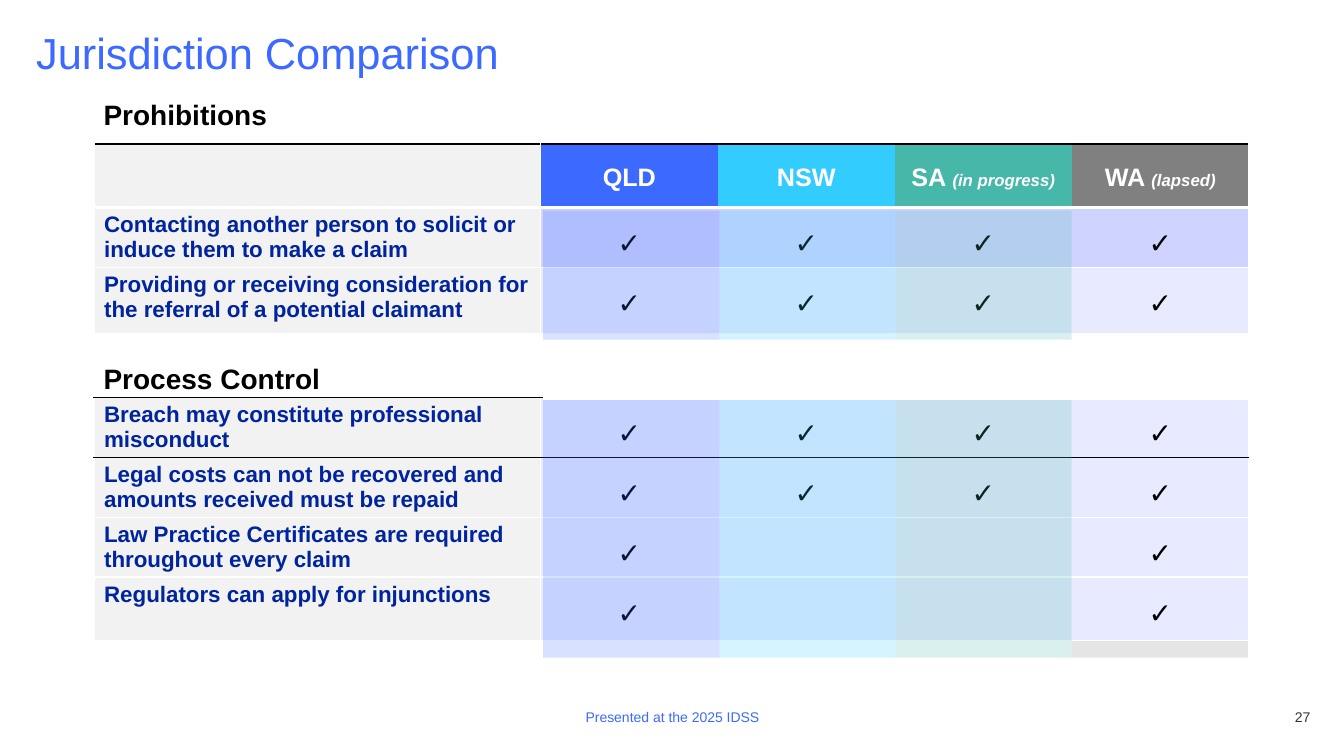
import pptx
import pptx.util
import pptx.dml.color
import pptx.enum.shapes
import pptx.enum.text
import pptx.oxml.ns
import lxml.etree
from dataclasses import dataclass

TITLE = "Jurisdiction Comparison"
SECTIONS = [("Prohibitions", 2.34), ("Process Control", 8.99)]
FOOTER = "Presented at the 2025 IDSS"
PAGE_NUMBER = "27"
JURISDICTIONS = [
    ("QLD", "", "3C69FF"),
    ("NSW", "", "33CCFF"),
    ("SA ", "(in progress)", "47B7AA"),
    ("WA ", "(lapsed)", "808080"),
]
RULES = [
    ("Contacting another person to solicit or induce them to make a claim", "✓✓✓✓", 1.51),
    ("Providing or receiving consideration for the referral of a potential claimant", "✓✓✓✓", 1.66),
    ("", "    ", 1.61),
    ("Breach may constitute professional misconduct", "✓✓✓✓", 1.51),
    ("Legal costs can not be recovered and amounts received must be repaid", "✓✓✓✓", 1.51),
    ("Law Practice Certificates are required throughout every claim", "✓  ✓", 1.51),
    ("Regulators can apply for injunctions", "✓  ✓", 1.6),
]
GAP_ROW = 3
BLACK_LINES = (0, 4, 5)


@dataclass(frozen=True)
class Theme:
    font: str = "Arial"
    blue: str = "3C69FF"
    navy: str = "00249E"
    black: str = "000000"
    white: str = "FFFFFF"
    dark: str = "323232"
    label_fill: str = "F2F2F2"
    first_fill: str = "CED4FF"
    row_fill: str = "E8EBFF"
    title_size: float = 31
    section_size: float = 20
    check_size: float = 20
    header_size: float = 18
    label_size: float = 16
    note_size: float = 12
    small_size: float = 10


theme = Theme()
Cm = pptx.util.Cm
ALIGN = pptx.enum.text.PP_ALIGN
ANCHOR = pptx.enum.text.MSO_ANCHOR

LABEL_WIDTH, COLUMN_WIDTH = 11.26, 4.46
TABLE_LEFT, TABLE_TOP, HEADER_HEIGHT = 2.37, 3.63, 1.6
TINT_LEFT, TINT_TOP, TINT_WIDTH, TINT_HEIGHT = 13.69, 5.31, 4.44, 11.26


def rgb(color):
    return pptx.dml.color.RGBColor.from_string(color)


def add_run(paragraph, text, size, color, bold=False, italic=False):
    run = paragraph.add_run()
    run.text = text
    run.font.name = theme.font
    run.font.size = pptx.util.Pt(size)
    run.font.color.rgb = rgb(color)
    run.font.bold = bold
    run.font.italic = italic


def add_text(slide, box, text, size, color, align=ALIGN.LEFT, bold=False, inset=True):
    frame = slide.shapes.add_textbox(*map(Cm, box)).text_frame
    frame.word_wrap = True
    if not inset:
        frame.margin_left = frame.margin_right = frame.margin_top = frame.margin_bottom = 0
        frame.vertical_anchor = ANCHOR.BOTTOM
    paragraph = frame.paragraphs[0]
    paragraph.alignment = align
    add_run(paragraph, text, size, color, bold)


def add_rectangle(slide, box, color, opacity=100):
    shape = slide.shapes.add_shape(pptx.enum.shapes.MSO_SHAPE.RECTANGLE, *map(Cm, box))
    shape.shadow.inherit = False
    shape.line.fill.background()
    shape.fill.solid()
    shape.fill.fore_color.rgb = rgb(color)
    if opacity < 100:
        value = shape.fill._xPr.find(".//" + pptx.oxml.ns.qn("a:srgbClr"))
        alpha = lxml.etree.SubElement(value, pptx.oxml.ns.qn("a:alpha"))
        alpha.set("val", str(opacity * 1000))


def add_tint(slide, index):
    left = TINT_LEFT + index * TINT_WIDTH
    add_rectangle(slide, (left, TINT_TOP, TINT_WIDTH, TINT_HEIGHT), JURISDICTIONS[index][2], 20)


def set_border(cell, side, color, width):
    properties = cell._tc.get_or_add_tcPr()
    line = lxml.etree.SubElement(properties, pptx.oxml.ns.qn("a:ln" + side))
    line.set("w", str(pptx.util.Pt(width)))
    if color is None:
        lxml.etree.SubElement(line, pptx.oxml.ns.qn("a:noFill"))
        return
    fill = lxml.etree.SubElement(line, pptx.oxml.ns.qn("a:solidFill"))
    lxml.etree.SubElement(fill, pptx.oxml.ns.qn("a:srgbClr")).set("val", color)


def horizontal_line(index):
    if index in BLACK_LINES:
        return theme.black, 1.5 if index == 0 else 1
    return theme.white, 3 if index == 1 else 1


def style_cell(cell, row, column, fill):
    last = len(JURISDICTIONS)
    set_border(cell, "L", theme.white if column <= 1 else None, 1)
    set_border(cell, "R", theme.white if column in (0, last) else None, 1)
    set_border(cell, "T", *horizontal_line(row))
    set_border(cell, "B", *horizontal_line(row + 1))
    cell.fill.solid()
    cell.fill.fore_color.rgb = rgb(fill)
    cell.vertical_anchor = ANCHOR.TOP


def centred_paragraph(cell):
    paragraph = cell.text_frame.paragraphs[0]
    paragraph.alignment = ALIGN.CENTER
    paragraph.line_spacing = 1.5
    return paragraph


def add_comparison(slide):
    heights = [HEADER_HEIGHT] + [height for _, _, height in RULES]
    widths = [LABEL_WIDTH] + [COLUMN_WIDTH] * len(JURISDICTIONS)
    box = (TABLE_LEFT, TABLE_TOP, sum(widths), sum(heights))
    table = slide.shapes.add_table(len(heights), len(widths), *map(Cm, box)).table
    table.horz_banding = False
    table.first_row = False
    for column, width in zip(table.columns, widths):
        column.width = Cm(width)
    for row, height in zip(table.rows, heights):
        row.height = Cm(height)

    style_cell(table.cell(0, 0), 0, 0, theme.label_fill)
    for column, (name, note, color) in enumerate(JURISDICTIONS, 1):
        cell = table.cell(0, column)
        style_cell(cell, 0, column, color)
        paragraph = centred_paragraph(cell)
        add_run(paragraph, name, theme.header_size, theme.white, True)
        if note:
            add_run(paragraph, note, theme.note_size, theme.white, True, True)

    for row, (label, checks, _) in enumerate(RULES, 1):
        gap = row == GAP_ROW
        cell = table.cell(row, 0)
        style_cell(cell, row, 0, theme.white if gap else theme.label_fill)
        if label:
            add_run(cell.text_frame.paragraphs[0], label, theme.label_size, theme.navy, True)
        fill = theme.white if gap else theme.first_fill if row == 1 else theme.row_fill
        for column, check in enumerate(checks, 1):
            cell = table.cell(row, column)
            style_cell(cell, row, column, fill)
            if check.strip():
                add_run(centred_paragraph(cell), check, theme.check_size, theme.black, True)


def main():
    presentation = pptx.Presentation()
    presentation.slide_width, presentation.slide_height = Cm(33.87), Cm(19.05)
    slide = presentation.slides.add_slide(presentation.slide_layouts[5])

    title = slide.shapes.title
    title.left, title.top, title.width, title.height = map(Cm, (0.91, 0.81, 32.11, 2.82))
    frame = title.text_frame
    frame.margin_left = frame.margin_right = frame.margin_top = frame.margin_bottom = 0
    frame.vertical_anchor = ANCHOR.TOP
    frame.auto_size = pptx.enum.text.MSO_AUTO_SIZE.NONE
    paragraph = frame.paragraphs[0]
    paragraph.alignment = ALIGN.LEFT
    paragraph.line_spacing = 0.9
    add_run(paragraph, TITLE, theme.title_size, theme.blue)

    add_tint(slide, 3)
    add_comparison(slide)
    for text, top in SECTIONS:
        add_text(slide, (2.36, top, 9.6, 1.12), text, theme.section_size, theme.black, bold=True)
    for index in range(3):
        add_tint(slide, index)
    add_rectangle(slide, (TINT_LEFT, 8.56, 18.44, 1.52), theme.white)

    add_text(slide, (11.23, 17.78, 11.43, 0.51), FOOTER, theme.small_size, theme.blue,
             ALIGN.CENTER, inset=False)
    add_text(slide, (31.85, 17.78, 1.17, 0.51), PAGE_NUMBER, theme.small_size, theme.dark,
             ALIGN.RIGHT, inset=False)
    presentation.save("out.pptx")


if __name__ == "__main__":
    main()
